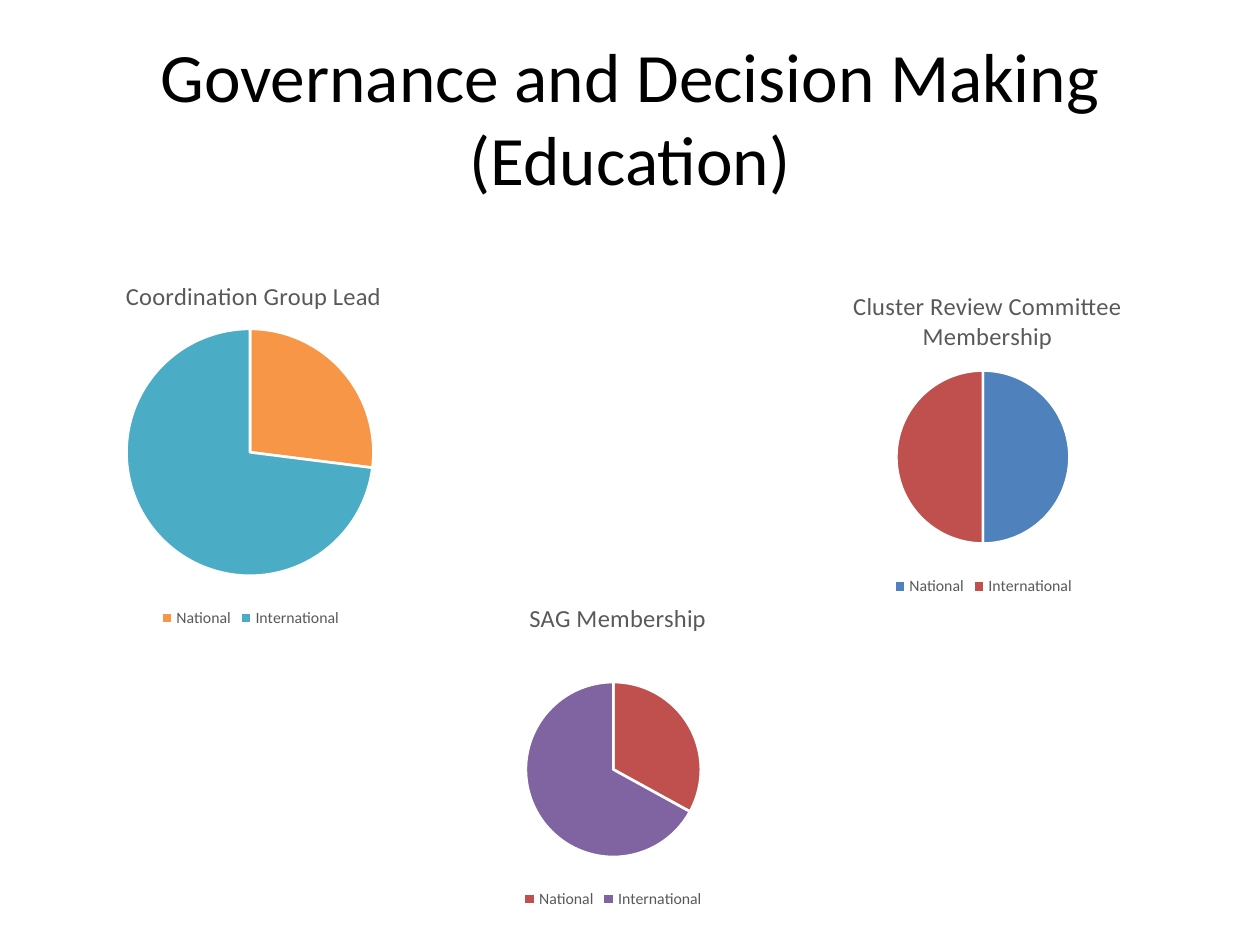
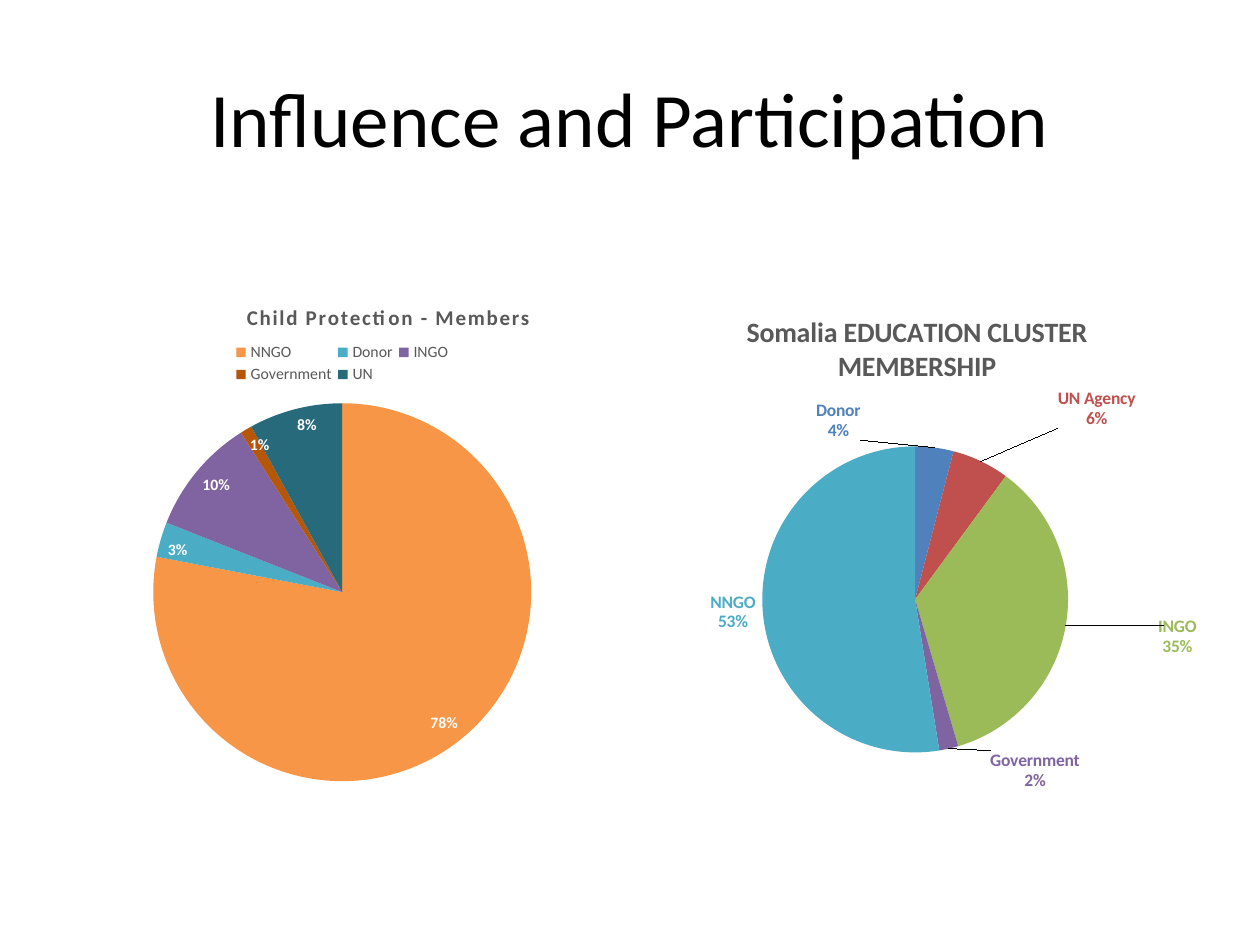
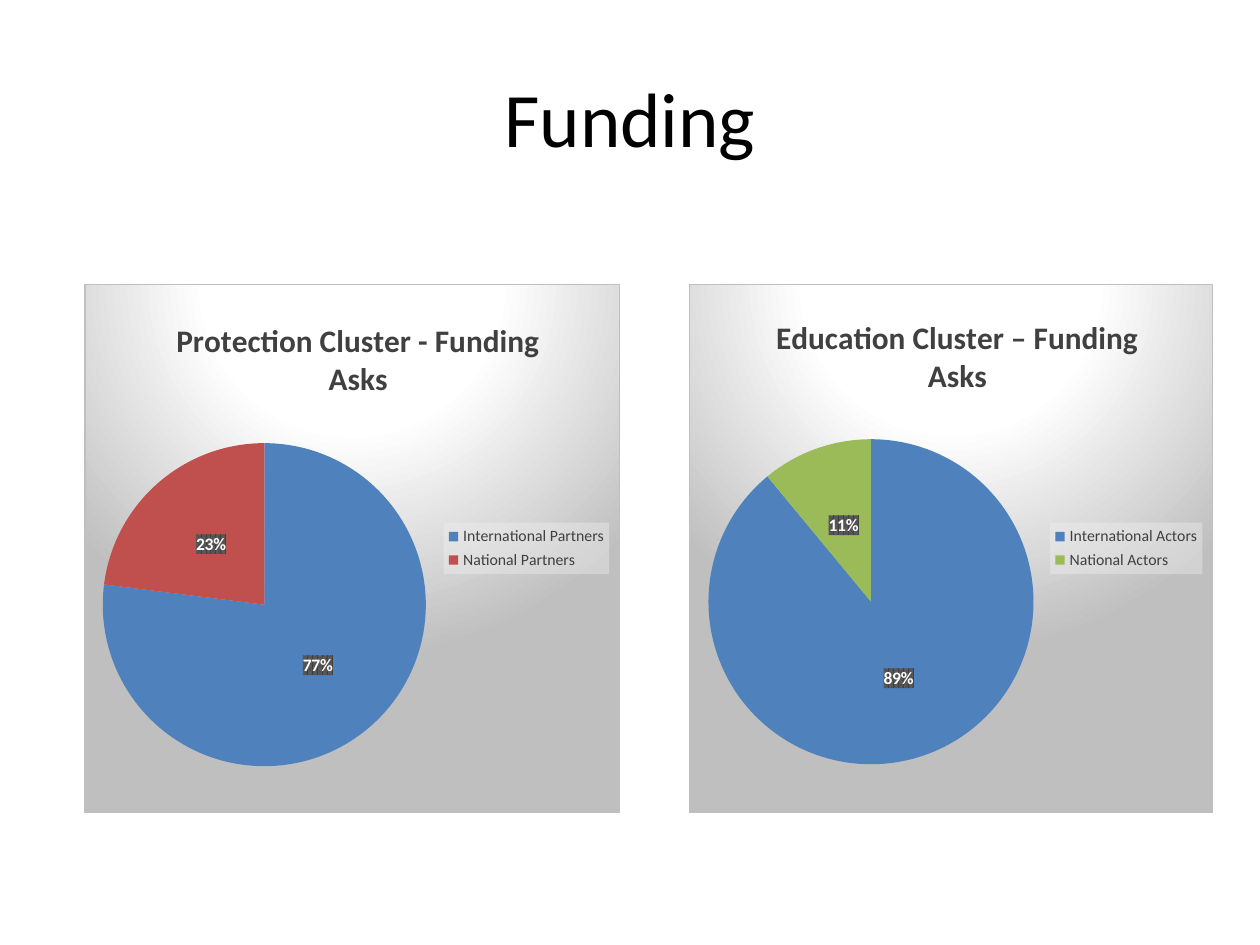
import pptx
import pptx.chart.data
import pptx.dml.color
import pptx.enum.chart
import pptx.enum.text
import pptx.oxml
import pptx.oxml.ns
import pptx.util

Cm = pptx.util.Cm
Pt = pptx.util.Pt
RGBColor = pptx.dml.color.RGBColor
Legend = pptx.enum.chart.XL_LEGEND_POSITION
LabelPosition = pptx.enum.chart.XL_LABEL_POSITION
qn = pptx.oxml.ns.qn

FONT = "Calibri"
BLACK = RGBColor(0x00, 0x00, 0x00)
WHITE = RGBColor(0xFF, 0xFF, 0xFF)
GRAY = RGBColor(0x59, 0x59, 0x59)
DARK_GRAY = RGBColor(0x40, 0x40, 0x40)
LEADER_GRAY = RGBColor(0xA6, 0xA6, 0xA6)
BLUE = RGBColor(0x4F, 0x81, 0xBD)
RED = RGBColor(0xC0, 0x50, 0x4D)
GREEN = RGBColor(0x9B, 0xBB, 0x59)
PURPLE = RGBColor(0x80, 0x64, 0xA2)
TEAL = RGBColor(0x4B, 0xAC, 0xC6)
ORANGE = RGBColor(0xF7, 0x96, 0x46)
BROWN = RGBColor(0xB6, 0x57, 0x08)
DARK_TEAL = RGBColor(0x27, 0x6A, 0x7C)

PANEL_STYLE = """
<a:gradFill><a:gsLst>
  <a:gs pos="0"><a:srgbClr val="FFFFFF"/></a:gs>
  <a:gs pos="39000"><a:srgbClr val="FFFFFF"/></a:gs>
  <a:gs pos="100000"><a:srgbClr val="BFBFBF"/></a:gs>
</a:gsLst><a:path path="circle">
  <a:fillToRect l="50000" t="-80000" r="50000" b="180000"/>
</a:path></a:gradFill>
<a:ln w="9525"><a:solidFill><a:srgbClr val="BFBFBF"/></a:solidFill></a:ln>"""
LEGEND_STYLE = """
<a:solidFill><a:srgbClr val="F2F2F2"><a:alpha val="39000"/></a:srgbClr></a:solidFill>"""
LABEL_STYLE = """
<a:pattFill prst="pct75"><a:fgClr><a:srgbClr val="404040"/></a:fgClr>
<a:bgClr><a:srgbClr val="595959"/></a:bgClr></a:pattFill>"""


def chart_xml(tag, content):
    namespaces = pptx.oxml.ns.nsdecls("c", "a")
    return pptx.oxml.parse_xml(f"<c:{tag} {namespaces}>{content}</c:{tag}>")


def set_layout(element, index, **settings):
    """Give a chart part a manual layout, as fractions of the chart."""
    for old_layout in element.findall(qn("c:layout")):
        element.remove(old_layout)
    items = "".join(f'<c:{name} val="{value}"/>' for name, value in settings.items())
    element.insert(index, chart_xml("layout", f"<c:manualLayout>{items}</c:manualLayout>"))


def style_font(font, size, color, bold=False):
    font.name = FONT
    font.size = Pt(size)
    font.bold = bold
    font.color.rgb = color


def add_title(slide, *lines, size=44):
    frame = slide.shapes.add_textbox(Cm(1.27), Cm(0.76), Cm(22.86), Cm(3.18)).text_frame
    frame.word_wrap = True
    frame.vertical_anchor = pptx.enum.text.MSO_ANCHOR.MIDDLE
    paragraph = frame.paragraphs[0]
    paragraph.alignment = pptx.enum.text.PP_ALIGN.CENTER
    for number, line in enumerate(lines):
        if number:
            paragraph.add_line_break()
        run = paragraph.add_run()
        run.text = line
        style_font(run.font, size, BLACK)


def add_pie(slide, box, pie, slices, border=None):
    """Draw a pie; box and pie (left, top, diameter within the box) are in cm."""
    names, values, colors = zip(*slices)
    data = pptx.chart.data.CategoryChartData()
    data.categories = names
    data.add_series("Series 1", values)
    chart = slide.shapes.add_chart(
        pptx.enum.chart.XL_CHART_TYPE.PIE, *map(Cm, box), data).chart
    style_font(chart.font, 10, BLACK)
    chart.has_legend = False
    plot = chart.plots[0]
    plot.vary_by_categories = True
    for number, color in enumerate(colors):
        style = plot.series[0].points[number].format
        style.fill.solid()
        style.fill.fore_color.rgb = color
        if border:
            style.line.color.rgb = border
            style.line.width = Pt(1.5)
        else:
            style.line.fill.background()
    left, top, diameter = pie
    width, height = box[2:]
    set_layout(chart.element.find(".//" + qn("c:plotArea")), 0,
               layoutTarget="inner", xMode="edge", yMode="edge",
               x=left / width, y=top / height, w=diameter / width, h=diameter / height)
    return chart


def add_heading(chart, box, text, place, size, color=GRAY, bold=True, spacing=0):
    """Title a chart; place is the left and top within the box, in cm."""
    chart.has_title = True
    run = chart.chart_title.text_frame.paragraphs[0].add_run()
    run.text = text
    style_font(run.font, size, color, bold)
    if spacing:
        run.font._element.set("spc", str(spacing))
    set_layout(chart.element.find(".//" + qn("c:title")), 1, xMode="edge", yMode="edge",
               x=place[0] / box[2], y=place[1] / box[3])


def add_legend(chart, position, color=GRAY):
    chart.has_legend = True
    chart.legend.position = position
    chart.legend.include_in_layout = False
    style_font(chart.legend.font, 9, color)
    return chart.element.find(".//" + qn("c:legend"))


def add_percentages(chart, position, size, color=WHITE):
    labels = chart.plots[0].series[0].data_labels
    labels.show_value = False
    labels.show_percentage = True
    labels.number_format = "0%"
    labels.number_format_is_linked = False
    labels.position = position
    style_font(labels.font, size, color, bold=True)
    return labels


def add_callouts(chart, slices, offsets):
    """Name each slice in its own colour, moved by a fraction of the chart."""
    add_percentages(chart, LabelPosition.OUTSIDE_END, 10, LEADER_GRAY).show_category_name = True
    series = chart.plots[0].series[0]
    for number, (name, value, color) in enumerate(slices):
        label = series.points[number].data_label
        style_font(label.font, 10, color, bold=True)
        label.position = LabelPosition.OUTSIDE_END
    for element, (x, y) in zip(chart.element.iter(qn("c:dLbl")), offsets):
        for tag, shown in (("showVal", 0), ("showCatName", 1), ("showPercent", 1)):
            element.find(qn("c:" + tag)).set("val", str(shown))
        element.find(qn("c:showBubbleSize")).addnext(chart_xml("separator", "\n"))
        if x or y:
            set_layout(element, 1, x=x, y=y)


def add_membership_pie(slide, heading, box, place, pie, national, colors):
    slices = [("National", national, colors[0]), ("International", 100 - national, colors[1])]
    chart = add_pie(slide, box, pie, slices, border=WHITE)
    add_heading(chart, box, heading, place, 14, bold=False)
    add_legend(chart, Legend.BOTTOM)


def add_funding_panel(slide, heading, box, place, pie, slices):
    chart = add_pie(slide, box, pie, slices)
    add_heading(chart, box, heading, place, 18, DARK_GRAY)
    legend = add_legend(chart, Legend.RIGHT, DARK_GRAY)
    add_percentages(chart, LabelPosition.CENTER, 10)
    # Panel, legend and label backgrounds go in front of their text properties
    chart.element.find(qn("c:chart")).addnext(chart_xml("spPr", PANEL_STYLE))
    labels = chart.element.find(".//" + qn("c:dLbls"))
    for element, style in ((legend, LEGEND_STYLE), (labels, LABEL_STYLE)):
        element.find(qn("c:txPr")).addprevious(chart_xml("spPr", style))


def build_governance(slide):
    add_title(slide, "Governance and Decision Making", "(Education)", size=39.6)
    add_membership_pie(slide, "Cluster Review Committee Membership",
                       (14.91, 5.33, 9.83, 6.78), (2.2, 0.4), (3.16, 2.14, 3.49),
                       50, (BLUE, RED))
    add_membership_pie(slide, "SAG Membership",
                       (6.3, 11.63, 12.12, 6.78), (4.28, 0.4), (4.3, 2.12, 3.53),
                       33, (RED, PURPLE))
    add_membership_pie(slide, "Coordination Group Lead",
                       (-1.3, 5.13, 12.7, 7.62), (3.75, 0.4), (3.85, 1.5, 4.98),
                       27, (ORANGE, TEAL))


def build_participation(slide):
    add_title(slide, "Influence and Participation")

    # Child protection members
    box = (1.5, 5.33, 10.8, 10.8)
    slices = [("NNGO", 78, ORANGE), ("Donor", 3, TEAL), ("INGO", 10, PURPLE),
              ("Government", 1, BROWN), ("UN", 8, DARK_TEAL)]
    chart = add_pie(slide, box, (1.59, 2.8, 7.62), slices)
    add_heading(chart, box, "Child Protection - Members", (3.4, 0.7), 12, spacing=100)
    legend = add_legend(chart, Legend.TOP)
    set_layout(legend, 1, xMode="edge", yMode="edge", x=0.29, y=0.14, w=0.42, h=0.09)
    add_percentages(chart, LabelPosition.INSIDE_END, 9)

    # Education cluster members
    box = (12.67, 5.72, 11.46, 10.67)
    slices = [("Donor", 4, BLUE), ("UN Agency", 6, RED), ("INGO", 35, GREEN),
              ("Government", 2, PURPLE), ("NNGO", 52, TEAL)]
    chart = add_pie(slide, box, (2.7, 3.28, 6.17), slices)
    add_heading(chart, box, "Somalia EDUCATION CLUSTER MEMBERSHIP", (2.28, 0.48), 16)
    add_callouts(chart, slices,
                 [(-0.21, 0), (0.13, -0.05), (0.16, -0.02), (0.07, -0.01), (0, 0)])


def build_funding(slide):
    add_title(slide, "Funding")
    add_funding_panel(slide, "Protection Cluster - Funding Asks",
                      (1.7, 5.72, 10.8, 10.67), (1.73, 0.58), (0.36, 3.21, 6.53),
                      [("International Partners", 77, BLUE), ("National Partners", 23, RED)])
    add_funding_panel(slide, "Education Cluster – Funding Asks",
                      (13.89, 5.72, 10.57, 10.67), (1.63, 0.52), (0.38, 3.13, 6.57),
                      [("International Actors", 89, BLUE), ("National Actors", 11, GREEN)])


def main():
    presentation = pptx.Presentation()
    presentation.slide_width = Cm(25.4)
    presentation.slide_height = Cm(19.05)
    for build in (build_governance, build_participation, build_funding):
        build(presentation.slides.add_slide(presentation.slide_layouts[6]))
    presentation.save("out.pptx")


if __name__ == "__main__":
    main()
